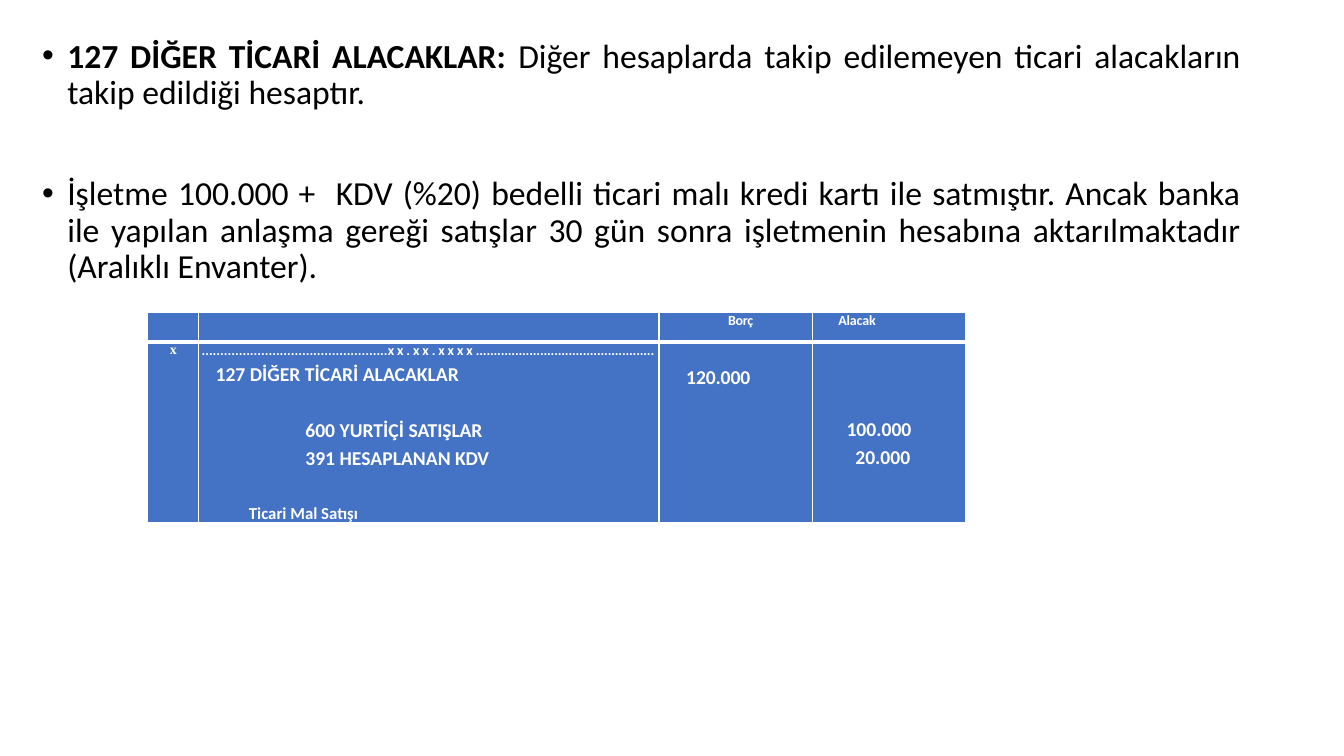
from dataclasses import dataclass

from lxml import etree
from pptx import Presentation
from pptx.dml.color import RGBColor
from pptx.enum.text import PP_ALIGN
from pptx.oxml.ns import qn
from pptx.table import _Cell
from pptx.text.text import TextFrame, _Paragraph
from pptx.util import Pt

BLACK = RGBColor(0x00, 0x00, 0x00)
WHITE = RGBColor(0xFF, 0xFF, 0xFF)
BLUE = RGBColor(0x44, 0x72, 0xC4)
LEFT, MID, FULL = PP_ALIGN.LEFT, PP_ALIGN.CENTER, PP_ALIGN.JUSTIFY
DOTS = "." * 50


@dataclass(frozen=True)
class Run:
    text: str
    track: float = 0
    bold: bool = True


@dataclass(frozen=True)
class Line:
    runs: tuple[Run, ...]
    size: float
    indent: float = 0
    before: float = 0
    align: PP_ALIGN = LEFT
    face: str = "Calibri"
    color: RGBColor = WHITE


@dataclass(frozen=True)
class Entry:
    lines: tuple[Line, ...] = ()
    top: float = 0


def note(before: float, *runs: Run) -> Line:
    return Line(runs, 24, 18, before, FULL, color=BLACK)


NOTES = (
    note(10, Run("127 DİĞER TİCARİ ALACAKLAR: "),
         Run("Diğer hesaplarda takip edilemeyen ticari alacakların takip edildiği hesaptır.",
             bold=False)),
    note(46.4, Run("İşletme 100.000 +  KDV (%20) bedelli ticari malı kredi kartı ile satmıştır. "
                   "Ancak banka ile yapılan anlaşma gereği satışlar 30 gün sonra işletmenin "
                   "hesabına aktarılmaktadır (Aralıklı Envanter).", bold=False)),
)

HEAD = (
    Entry(),
    Entry(),
    Entry((Line((Run("Borç", -0.2),), 10, 7.2, align=MID),)),
    Entry((Line((Run("Alacak", -0.1),), 10, 18.7),)),
)
BODY = (
    Entry((Line((Run("x", -0.5),), 10, 0.7, align=MID, face="Times New Roman"),)),
    Entry((
        Line((Run(DOTS), Run("xx.xx.xxxx", 2.1), Run(DOTS, -0.1)), 10, 2.2),
        Line((Run("127 DİĞER TİCARİ ALACAKLAR"),), 14, 12.2, 3),
        Line((Run("600 YURTİÇİ "), Run("SATIŞLAR", -0.1)), 14, 76.3, 23.1),
        Line((Run("391 HESAPLANAN"), Run(" KDV", -0.2)), 14, 76.3, 3),
        Line((Run("Ticari Mal Satışı"),), 12, 36, 23.1),
    )),
    Entry((Line((Run("120.000", -0.1),), 14, 19.4),), 17.1),
    Entry((
        Line((Run("100.000"),), 14, 24.5),
        Line((Run("20.000"),), 14, 30.8, 3),
    ), 54.2),
)
WIDTHS = (36.7, 329, 109.4, 109.4)
HEIGHTS = (20.9, 129)


def write(para: _Paragraph, line: Line) -> None:
    for key, value in {"alignment": line.align, "space_before": Pt(line.before)}.items():
        setattr(para, key, value)
    para._p.get_or_add_pPr().set("marL", str(Pt(line.indent)))
    for part in line.runs:
        run = para.add_run()
        run.text = part.text
        style = {"name": line.face, "size": Pt(line.size), "bold": part.bold}
        for key, value in style.items():
            setattr(run.font, key, value)
        run.font.color.rgb = line.color
        if part.track:
            run._r.get_or_add_rPr().set("spc", str(round(part.track * 100)))


def fill_text(frame: TextFrame, lines: tuple[Line, ...]) -> list[_Paragraph]:
    paras = [frame.paragraphs[0]] + [frame.add_paragraph() for _ in lines[1:]]
    for para, line in zip(paras, lines):
        write(para, line)
    return paras


def edge(cell: _Cell, side: str, width: float) -> None:
    line = etree.SubElement(cell._tc.get_or_add_tcPr(), qn(f"a:ln{side}"), w=str(Pt(width)))
    paint = etree.SubElement(line, qn("a:solidFill"))
    etree.SubElement(paint, qn("a:srgbClr"), val=str(WHITE))


def draw_cell(cell: _Cell, entry: Entry, edges: dict[str, float]) -> None:
    for side, width in edges.items():
        edge(cell, side, width)
    cell.fill.solid()
    cell.fill.fore_color.rgb = BLUE
    pads = {"left": 0, "right": 0, "top": entry.top, "bottom": 0}
    for side, pad in pads.items():
        setattr(cell, f"margin_{side}", Pt(pad))
    if entry.lines:
        fill_text(cell.text_frame, entry.lines)
    else:
        # Keeps an empty cell from stretching its row
        etree.SubElement(cell.text_frame.paragraphs[0]._p, qn("a:endParaRPr"), sz="1000")


def main() -> None:
    deck = Presentation()
    deck.slide_width, deck.slide_height = Pt(960), Pt(540)
    slide = deck.slides.add_slide(deck.slide_layouts[6])

    box = slide.shapes.add_textbox(Pt(23), Pt(24.5), Pt(870.5), Pt(486.7))
    box.text_frame.word_wrap = True
    for para in fill_text(box.text_frame, NOTES):
        para.line_spacing = 0.9
        props = para._p.get_or_add_pPr()
        props.set("indent", str(Pt(-18)))
        etree.SubElement(props, qn("a:buFont"), typeface="Arial")
        etree.SubElement(props, qn("a:buChar"), char="•")

    table = slide.shapes.add_table(len(HEIGHTS), len(WIDTHS), Pt(105.1), Pt(223.3),
                                   Pt(sum(WIDTHS)), Pt(sum(HEIGHTS))).table
    table.first_row = table.horz_banding = False
    for column, width in zip(table.columns, WIDTHS):
        column.width = Pt(width)
    for row, height in zip(table.rows, HEIGHTS):
        row.height = Pt(height)
    for i, entries in enumerate((HEAD, BODY)):
        edges = {"L": 1, "R": 1, "T": 3 if i else 1, "B": 1 if i else 3}
        for j, entry in enumerate(entries):
            draw_cell(table.cell(i, j), entry, edges)

    deck.save("out.pptx")


if __name__ == "__main__":
    main()
